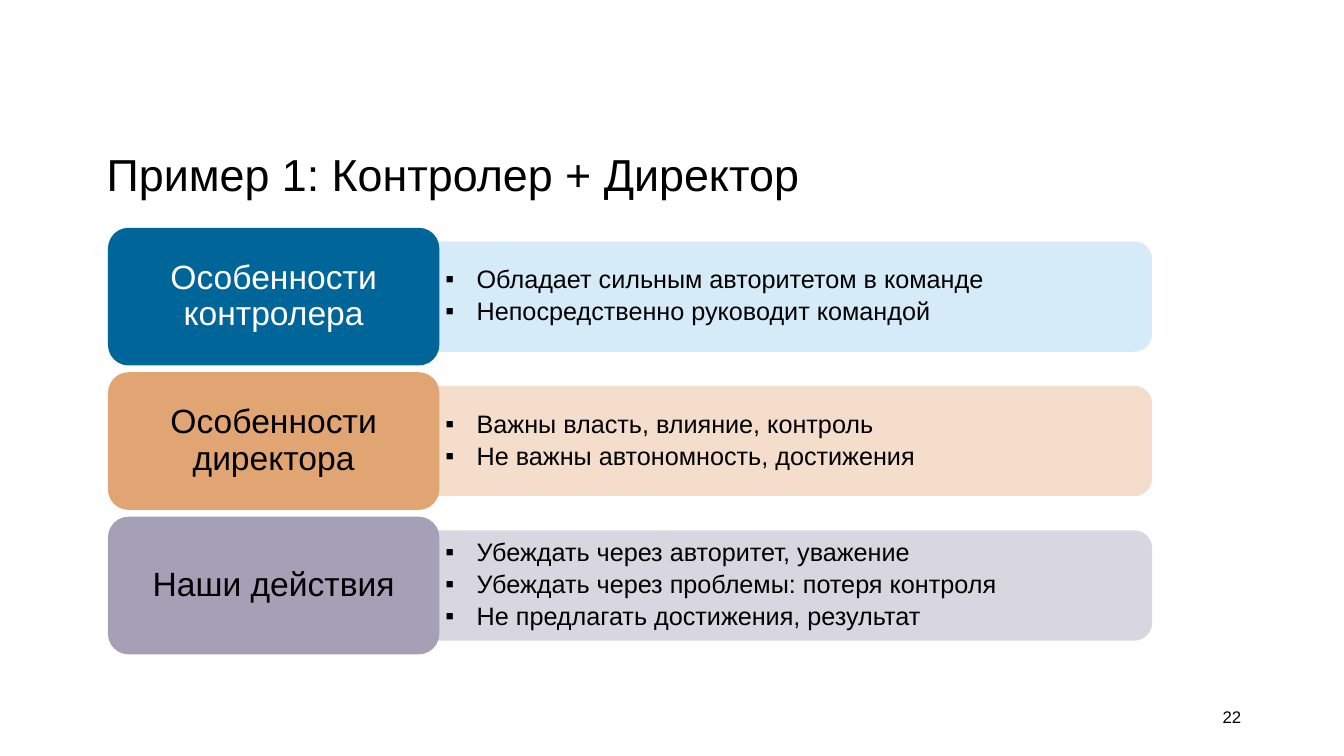
"""Build a slide with three labelled rows about the controller and the director."""
from math import cos, pi, sin

from lxml.etree import SubElement
from pptx import Presentation
from pptx.dml.color import RGBColor
from pptx.enum.shapes import MSO_SHAPE as SHAPE
from pptx.enum.text import MSO_ANCHOR as ANCHOR, PP_ALIGN as ALIGN
from pptx.oxml.ns import qn
from pptx.util import Cm, Pt

COLORS = {
    "black": "000000", "white": "FFFFFF",
    "blue": "006699", "light_blue": "D1E9F7",
    "orange": "E1A574", "light_orange": "F3DAC5",
    "violet": "A5A0B6", "light_violet": "D4D2DC",
}
ROWS = [
    ("Особенности контролера", "blue", "white",
     ["Обладает сильным авторитетом в команде", "Непосредственно руководит командой"]),
    ("Особенности директора", "orange", "black",
     ["Важны власть, влияние, контроль", "Не важны автономность, достижения"]),
    ("Наши действия", "violet", "black",
     ["Убеждать через авторитет, уважение", "Убеждать через проблемы: потеря контроля",
      "Не предлагать достижения, результат"]),
]
CARD_LEFT, CARD_TOP, CARD_WIDTH, CARD_HEIGHT = 2.72, 5.74, 8.35, 3.47
BAR_LEFT, BAR_RIGHT, BAR_HEIGHT, BAR_RADIUS = 11.02, 29.03, 2.78, 0.46
ROW_PITCH = 3.64
ARC_STEPS = 12


def write(shape, lines, size, color, align, anchor, insets, spacing=1.0, after=0, bullet=None):
    """Fill a shape with formatted paragraphs."""
    frame = shape.text_frame
    frame.text = "\n".join(lines)
    frame_format = {"word_wrap": True, "vertical_anchor": anchor}
    sides = ("margin_left", "margin_top", "margin_right", "margin_bottom")
    frame_format.update(zip(sides, map(Cm, insets)))
    for name, value in frame_format.items():
        setattr(frame, name, value)
    for paragraph in frame.paragraphs:
        paragraph_format = {"alignment": align, "line_spacing": spacing, "space_after": Pt(after)}
        for name, value in paragraph_format.items():
            setattr(paragraph, name, value)
        if bullet:
            properties = paragraph._p.get_or_add_pPr()
            properties.set("marL", str(Cm(0.79)))
            properties.set("indent", str(-Cm(0.79)))
            SubElement(properties, qn("a:buFont"), typeface="Arial")
            SubElement(properties, qn("a:buChar"), char=bullet)
        for run in paragraph.runs:
            for name, value in {"name": "Arial", "size": Pt(size)}.items():
                setattr(run.font, name, value)
            run.font.color.rgb = RGBColor.from_string(COLORS[color])


def paint(shape, color):
    """Give a shape a plain fill with no outline or shadow."""
    shape.shadow.inherit = False
    shape.fill.solid()
    shape.fill.fore_color.rgb = RGBColor.from_string(COLORS[color])
    shape.line.fill.background()


presentation = Presentation()
presentation.slide_width, presentation.slide_height = Cm(33.86), Cm(19.05)
slide = presentation.slides.add_slide(presentation.slide_layouts[6])

title = slide.shapes.add_textbox(Cm(2.44), Cm(3.45), Cm(23.37), Cm(1.85))
write(title, ["Пример 1: Контролер + Директор"], 32, "black", ALIGN.LEFT, ANCHOR.MIDDLE,
      (0.25, 0.13, 0.25, 0.13))

for index, (label, color, label_color, points) in enumerate(ROWS):
    card_top = CARD_TOP + index * ROW_PITCH
    bar_top = card_top + (CARD_HEIGHT - BAR_HEIGHT) / 2
    bar_bottom = bar_top + BAR_HEIGHT

    outline = []
    corners = ((bar_top + BAR_RADIUS, -pi / 2), (bar_bottom - BAR_RADIUS, 0))
    for center_y, start_angle in corners:
        for step in range(ARC_STEPS + 1):
            angle = start_angle + step * pi / 2 / ARC_STEPS
            outline.append((Cm(BAR_RIGHT - BAR_RADIUS + BAR_RADIUS * cos(angle)),
                            Cm(center_y + BAR_RADIUS * sin(angle))))
    outline.append((Cm(BAR_LEFT), Cm(bar_bottom)))
    builder = slide.shapes.build_freeform(Cm(BAR_LEFT), Cm(bar_top))
    builder.add_line_segments(outline, close=True)
    bar = builder.convert_to_shape()
    paint(bar, "light_" + color)
    bar_color = bar._element.spPr.find(qn("a:solidFill")).find(qn("a:srgbClr"))
    SubElement(bar_color, qn("a:alpha"), val="90000")
    write(bar, points, 18, "black", ALIGN.LEFT, ANCHOR.MIDDLE,
          (0.2, 0.23, 0.33, 0.23), 0.9, 3.5, "▪")

    card = slide.shapes.add_shape(SHAPE.ROUNDED_RECTANGLE, Cm(CARD_LEFT), Cm(card_top),
                                  Cm(CARD_WIDTH), Cm(CARD_HEIGHT))
    card.adjustments[0] = 0.15
    paint(card, color)
    write(card, [label], 24, label_color, ALIGN.CENTER, ANCHOR.MIDDLE,
          (0.56, 0.36, 0.56, 0.36), 0.9)

page_number = slide.shapes.add_textbox(Cm(27.86), Cm(17.7), Cm(3.66), Cm(0.74))
write(page_number, ["22"], 12, "black", ALIGN.RIGHT, ANCHOR.BOTTOM, (0.25, 0.13, 0.25, 0.13))

presentation.save("out.pptx")
